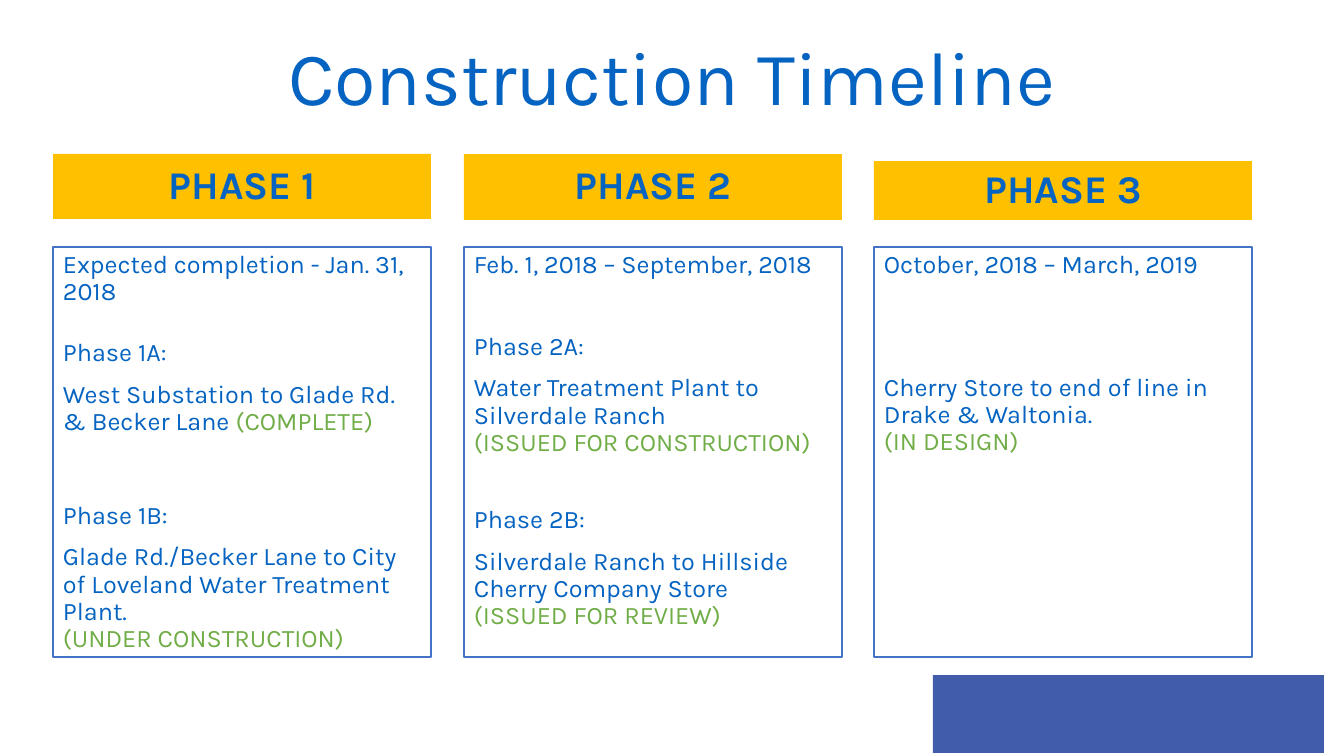
"""Build the Construction Timeline slide."""
from pptx import Presentation
from pptx.dml.color import RGBColor
from pptx.enum.shapes import MSO_SHAPE
from pptx.enum.text import MSO_ANCHOR, PP_ALIGN
from pptx.util import Emu, Pt

RECT = MSO_SHAPE.RECTANGLE
TOP, MIDDLE = MSO_ANCHOR.TOP, MSO_ANCHOR.MIDDLE
LEFT, CENTER = PP_ALIGN.LEFT, PP_ALIGN.CENTER
EMU_PER_PX = 914400 / 100.8

FONT = "Karla"
BLUE, GREEN, GOLD, WHITE = "0563C1", "70AD47", "FFC000", "FFFFFF"
BORDER, CORNER = "4472C4", "415CAB"

TITLE = "Construction Timeline"
PHASES = [
    {"name": "PHASE 1", "left": 53, "header": (154, 65), "body": [
        (0, [("Expected completion - Jan. 31, 2018", BLUE)]),
        (24, [("Phase 1A:", BLUE)]),
        (10, [("West Substation to Glade Rd. & Becker Lane ", BLUE), ("(COMPLETE)", GREEN)]),
        (48, [("Phase 1B:", BLUE)]),
        (10, [("Glade Rd./Becker Lane to City of Loveland Water Treatment Plant.", BLUE)]),
        (0, [("(UNDER CONSTRUCTION)", GREEN)]),
    ]},
    {"name": "PHASE 2", "left": 464, "header": (154, 66), "body": [
        (0, [("Feb. 1, 2018 – September, 2018", BLUE)]),
        (39, [("Phase 2A:", BLUE)]),
        (10, [("Water Treatment Plant to Silverdale Ranch", BLUE)]),
        (0, [("(ISSUED FOR CONSTRUCTION)", GREEN)]),
        (36, [("Phase 2B:", BLUE)]),
        (10, [("Silverdale Ranch to Hillside Cherry Company Store", BLUE)]),
        (0, [("(ISSUED FOR REVIEW)", GREEN)]),
    ]},
    {"name": "PHASE 3", "left": 874, "header": (161, 59), "body": [
        (0, [("October, 2018 – March, 2019", BLUE)]),
        (68, [("Cherry Store to end of line in Drake & Waltonia.", BLUE)]),
        (0, [("(IN DESIGN)", GREEN)]),
    ]},
]
COLUMN_WIDTH, BODY_TOP, BODY_HEIGHT = 378, 247, 410


def px(n):
    """Turn px into EMU."""
    return Emu(round(n * EMU_PER_PX))


def color(value):
    """Turn a hex string into a colour."""
    return RGBColor.from_string(value)


def paint(sp, fill, line=None):
    """Set fill and outline and drop the shadow."""
    sp.shadow.inherit = False
    sp.fill.solid()
    sp.fill.fore_color.rgb = color(fill)
    if line:
        sp.line.color.rgb = color(line)
        sp.line.width = Pt(1)
    else:
        sp.line.fill.background()


def write(tf, runs, size=18, bold=False, align=LEFT, before=0):
    """Add one paragraph of (text, colour) runs."""
    p = tf.paragraphs[0] if not tf.text else tf.add_paragraph()
    p.alignment, p.line_spacing, p.space_before = align, 0.9, Pt(before)
    for text, shade in runs:
        r = p.add_run()
        r.text = text
        r.font.name, r.font.size, r.font.bold = FONT, Pt(size), bold
        r.font.color.rgb = color(shade)


def add_box(s, left, top, width, height, fill=None, line=None, anchor=MIDDLE):
    """Add a rectangle, or a text box without fill, and return its text frame."""
    at = [px(n) for n in (left, top, width, height)]
    if fill:
        sp = s.shapes.add_shape(RECT, *at)
        paint(sp, fill, line)
    else:
        sp = s.shapes.add_textbox(*at)
    tf = sp.text_frame
    tf.word_wrap = True
    tf.vertical_anchor = anchor
    return tf


def add_phase(s, phase):
    """Add one phase column."""
    left = phase["left"]
    tf = add_box(s, left, BODY_TOP, COLUMN_WIDTH, BODY_HEIGHT, WHITE, BORDER, TOP)
    for before, runs in phase["body"]:
        write(tf, runs, before=before)
    top, height = phase["header"]
    tf = add_box(s, left, top, COLUMN_WIDTH, height, GOLD)
    write(tf, [(phase["name"], BLUE)], size=28, bold=True, align=CENTER)


def main():
    """Build and save the slide."""
    prs = Presentation()
    prs.slide_width, prs.slide_height = px(1344), px(756)
    s = prs.slides.add_slide(prs.slide_layouts[6])
    add_box(s, 933, 675, 391, 78, CORNER)
    write(add_box(s, 0, 46, 1344, 69), [(TITLE, BLUE)], size=54, align=CENTER)
    for phase in PHASES:
        add_phase(s, phase)
    prs.save("out.pptx")


if __name__ == "__main__":
    main()
